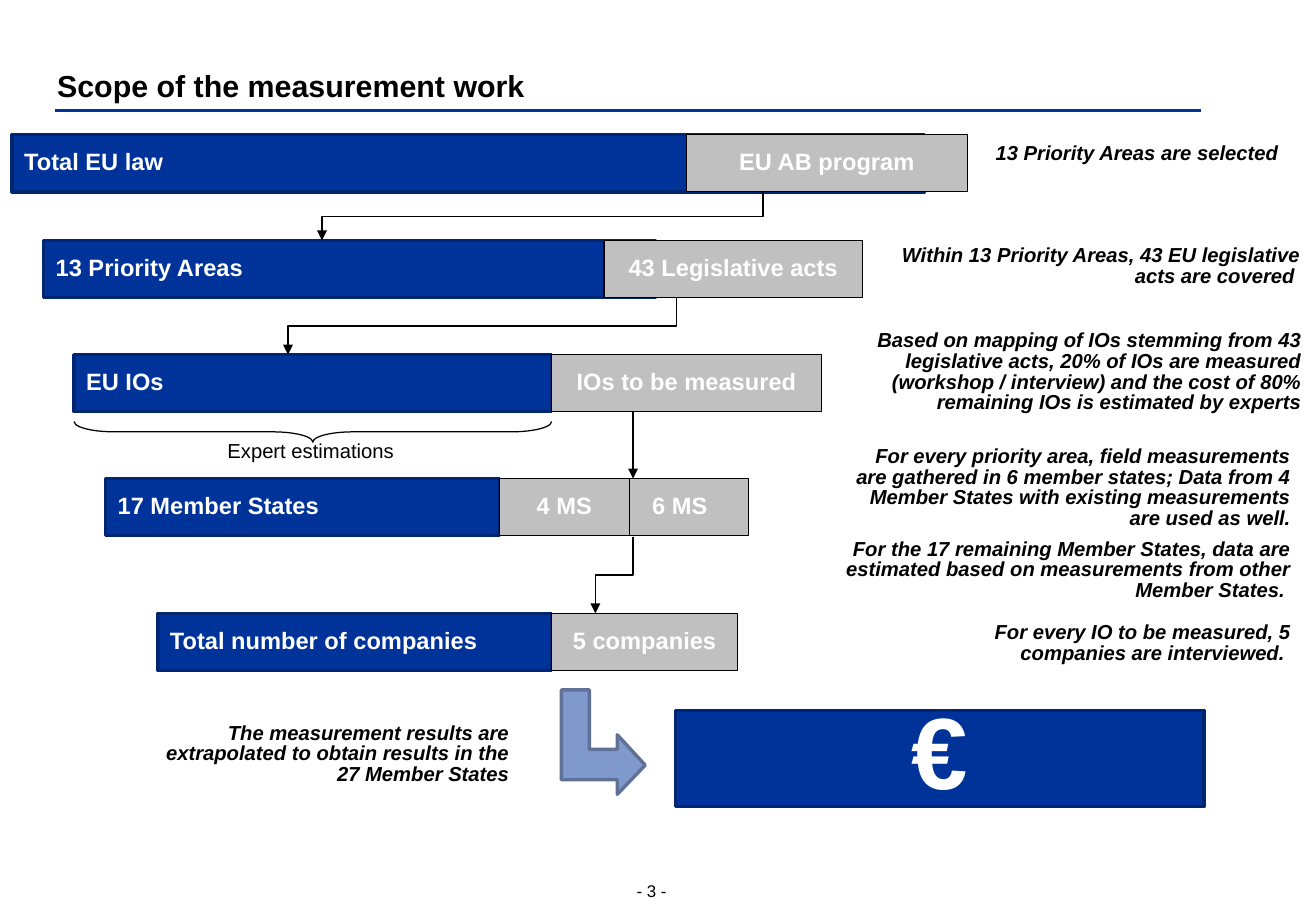
from pptx import Presentation
from pptx.dml.color import RGBColor
from pptx.enum.shapes import MSO_CONNECTOR as LINK, MSO_SHAPE as SHAPE
from pptx.enum.text import MSO_ANCHOR as ANCHOR, MSO_AUTO_SIZE as FIT, PP_ALIGN as ALIGN
from pptx.oxml.ns import qn
from pptx.util import Pt
from lxml.etree import SubElement

PX = 9144  # 100 px to the inch
COLORS = {
    "blue": "003399", "navy": "002671", "gray": "C0C0C0", "black": "000000",
    "white": "FFFFFF", "arrow": "8099CC", "arrow_edge": "5F7197",
}
RGB = {name: RGBColor.from_string(code) for name, code in COLORS.items()}

prs = Presentation()
prs.slide_width, prs.slide_height = 1083 * PX, 750 * PX
slide = prs.slides.add_slide(prs.slide_layouts[5])
shapes = slide.shapes


def write(shape, text, size, color="black", align=ALIGN.LEFT, bold=False,
          italic=False, spacing=0.85, anchor=ANCHOR.TOP, inset=None):
    frame = shape.text_frame
    frame.text = text
    frame.word_wrap = True
    frame.auto_size = FIT.NONE
    frame.vertical_anchor = anchor
    if inset is not None:
        frame.margin_left = frame.margin_top = inset
        frame.margin_right = frame.margin_bottom = inset
    for index, paragraph in enumerate(frame.paragraphs):
        paragraph.alignment = align
        paragraph.line_spacing = spacing
        paragraph.space_before = Pt(6 if index else 0)
        for run in paragraph.runs:
            font = run.font
            font.name, font.size = "Arial", Pt(size)
            font.bold, font.italic = bold, italic
            font.color.rgb = RGB[color]


def paint(shape, fill, line, width):
    shape.shadow.inherit = False
    if fill:
        shape.fill.solid()
        shape.fill.fore_color.rgb = RGB[fill]
    else:
        shape.fill.background()
    shape.line.color.rgb = RGB[line]
    shape.line.width = Pt(width)


# Title, rule and page number
title = shapes.title
title.left, title.top, title.width, title.height = 47 * PX, 53 * PX, 991 * PX, 32 * PX
write(title, "Scope of the measurement work", 18, bold=True, spacing=1.06,
      anchor=ANCHOR.BOTTOM, inset=0)
page_number = shapes.add_textbox(524 * PX, 725 * PX, 40 * PX, 17 * PX)
write(page_number, "- 3 -", 10, spacing=1, inset=0)

# Funnel bars: each row is a total (blue) and its selected part (gray)
BAR_HEIGHT = 47
bars = [
    (10, 111, 751, "blue", "Total EU law"),
    (565, 111, 231, "gray", "EU AB program"),
    (36, 198, 503, "blue", "13 Priority Areas"),
    (497, 198, 213, "gray", "43 Legislative acts"),
    (61, 292, 393, "blue", "EU IOs"),
    (454, 292, 222, "gray", "IOs to be measured"),
    (87, 394, 324, "blue", "17 Member States"),
    (514, 394, 102, "gray", "6 MS"),
    (411, 394, 107, "gray", "4 MS"),
    (130, 505, 324, "blue", "Total number of companies"),
    (454, 505, 153, "gray", "5 companies"),
]
for left, top, width, color, label in bars:
    bar = shapes.add_shape(SHAPE.RECTANGLE, left * PX, top * PX, width * PX, BAR_HEIGHT * PX)
    is_total = color == "blue"
    paint(bar, color, "navy" if is_total else "black", 2 if is_total else 0.75)
    write(bar, label, 14, "white", ALIGN.LEFT if is_total else ALIGN.CENTER,
          bold=True, anchor=ANCHOR.MIDDLE)
    if label == "6 MS":
        bar.text_frame.margin_right = 21 * PX

euro = shapes.add_shape(SHAPE.RECTANGLE, 556 * PX, 585 * PX, 435 * PX, 79 * PX)
paint(euro, "blue", "navy", 2)
write(euro, "€", 60, "white", ALIGN.CENTER, bold=True, anchor=ANCHOR.MIDDLE)

# Explanations
notes = [
    (808, 114, 254, 27, "13 Priority Areas are selected"),
    (718, 198, 362, 44, "Within 13 Priority Areas, 43 EU legislative acts are covered "),
    (701, 268, 380, 78, "Based on mapping of IOs stemming from 43 legislative acts, 20% of IOs "
     "are measured (workshop / interview) and the cost of 80% remaining IOs is estimated "
     "by experts"),
    (684, 363, 388, 139, "For every priority area, field measurements are gathered in 6 member "
     "states; Data from 4 Member States with existing measurements are used as well.\n"
     "For the 17 remaining Member States, data are estimated based on measurements from "
     "other Member States. "),
    (731, 508, 341, 44, "For every IO to be measured, 5 companies are interviewed. "),
    (113, 591, 316, 61, "The measurement results are extrapolated to obtain results in the "
     "27 Member States"),
]
for left, top, width, height, text in notes:
    note = shapes.add_textbox(left * PX, top * PX, width * PX, height * PX)
    write(note, text, 12, align=ALIGN.RIGHT, bold=True, italic=True)

# Brace under the EU IOs bar
brace = shapes.add_shape(SHAPE.LEFT_BRACE, 249 * PX, 159 * PX, 17 * PX, 393 * PX)
brace.rotation = 270
brace.adjustments[0] = 1.94
paint(brace, None, "black", 0.75)
estimations = shapes.add_textbox(147 * PX, 356 * PX, 222 * PX, 30 * PX)
write(estimations, "Expert estimations ", 12, align=ALIGN.CENTER, spacing=1)

# Arrow to the extrapolated result
outline = [(531, 630), (508, 605), (508, 617), (485, 617), (485, 568),
           (462, 568), (462, 642), (508, 642), (508, 654)]
builder = shapes.build_freeform(*outline[0], scale=PX)
builder.add_line_segments(outline[1:], close=True)
paint(builder.convert_to_shape(), "arrow", "arrow_edge", 2)

# Title rule and the arrows between rows: start, end, colour, line width
links = [
    (45, 91, 988, 91, "blue", 1.5),
    (628, 158, 265, 198, "black", 0.75),
    (557, 245, 237, 292, "black", 0.75),
    (521, 339, 521, 394, "black", 0.75),
    (521, 442, 490, 505, "black", 0.75),
]
for x1, y1, x2, y2, color, width in links:
    is_bent = x1 != x2 and y1 != y2
    if is_bent:
        # A quarter turn makes the elbow leave its start downwards
        mid_x, mid_y = (x1 + x2) / 2, (y1 + y2) / 2
        half_drop, half_run = (y2 - y1) / 2, (x1 - x2) / 2
        ends = (mid_x - half_drop, mid_y - half_run, mid_x + half_drop, mid_y + half_run)
    else:
        ends = (x1, y1, x2, y2)
    link = shapes.add_connector(LINK.ELBOW if is_bent else LINK.STRAIGHT,
                                *(int(end * PX) for end in ends))
    link.line.color.rgb = RGB[color]
    link.line.width = Pt(width)
    properties = link._element.spPr
    if is_bent:
        properties.find(qn("a:xfrm")).set("rot", "5400000")
    if y1 != y2:
        SubElement(link.line._get_or_add_ln(), qn("a:tailEnd"), type="triangle")
    SubElement(properties, qn("a:effectLst"))

prs.save("out.pptx")
